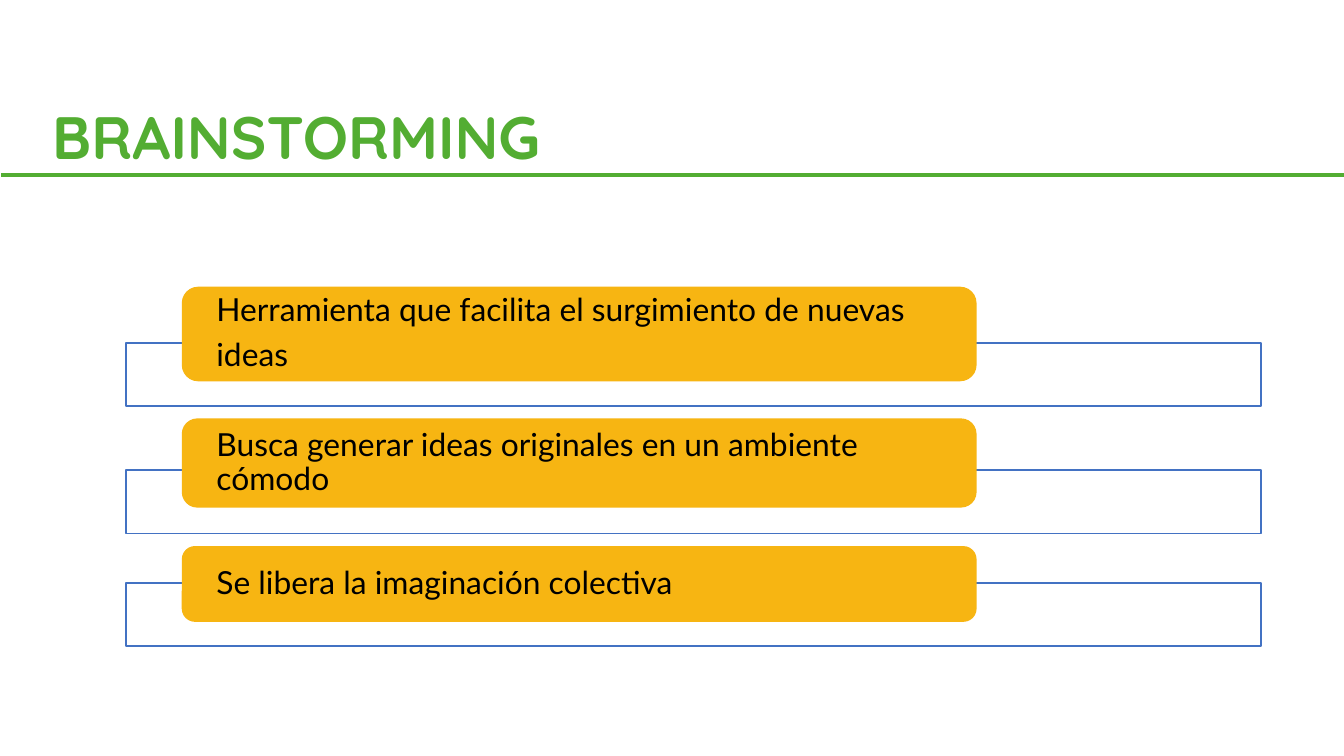
from dataclasses import dataclass

from lxml.etree import SubElement
from pptx import Presentation
from pptx.dml.color import RGBColor
from pptx.enum.shapes import MSO_CONNECTOR, MSO_SHAPE
from pptx.enum.text import MSO_ANCHOR
from pptx.oxml.ns import qn
from pptx.util import Inches, Pt

GREEN, GOLD, BLUE = "53AD32", "F7B512", "4372C3"
WHITE, BLACK = "FFFFFF", "000000"
PAD = 0.03  # gap between a label's edge and its text box


@dataclass
class Idea:
    lines: list[str]
    bar_top: float
    top: float
    high: float


IDEAS = [
    Idea(["Herramienta que facilita el surgimiento de nuevas", "ideas"],
         2.55, 2.14, 0.69),
    Idea(["Busca generar ideas originales en un ambiente cómodo"],
         3.5, 3.12, 0.65),
    Idea(["Se libera la imaginación colectiva"], 4.34, 4.07, 0.55),
]


def tint(color, code: str) -> None:
    color.rgb = RGBColor.from_string(code)


def add_box(slide, kind, left: float, top: float, wide: float, high: float,
            fill: str, edge: str):
    box = slide.shapes.add_shape(kind, Inches(left), Inches(top),
                                 Inches(wide), Inches(high))
    box.shadow.inherit = False
    box.fill.solid()
    tint(box.fill.fore_color, fill)
    tint(box.line.color, edge)
    box.line.width = Pt(1)
    return box


def add_text(slide, lines: list[str], left: float, top: float, wide: float,
             high: float, side: float, edge: float, font: str, size: int,
             color: str, bold: bool = False) -> None:
    box = slide.shapes.add_textbox(Inches(left), Inches(top),
                                   Inches(wide), Inches(high))
    frame = box.text_frame
    frame.word_wrap = True
    frame.vertical_anchor = MSO_ANCHOR.MIDDLE
    frame.margin_left = frame.margin_right = Inches(side)
    frame.margin_top = frame.margin_bottom = Inches(edge)
    frame.text = "\n".join(lines)
    for i, para in enumerate(frame.paragraphs):
        para.line_spacing = 0.9
        para.space_before = Pt(6 if i else 0)
        for run in para.runs:
            run.font.name = font
            run.font.size = Pt(size)
            run.font.bold = bold
            tint(run.font.color, color)


def add_idea(slide, idea: Idea) -> None:
    # Bar behind the label, slightly transparent
    bar = add_box(slide, MSO_SHAPE.RECTANGLE, 0.94, idea.bar_top, 8.44, 0.47,
                  WHITE, BLUE)
    tone = bar.fill._xPr.find(qn("a:solidFill"))[0]
    SubElement(tone, qn("a:alpha")).set("val", "90000")

    # Label and its text
    left, wide = 1.36, 5.9
    add_box(slide, MSO_SHAPE.ROUNDED_RECTANGLE, left, idea.top, wide,
            idea.high, GOLD, GOLD)
    add_text(slide, idea.lines, left + PAD, idea.top + PAD, wide - 2 * PAD,
             idea.high - 2 * PAD, 0.22, 0, "Lato", 17, BLACK)


def add_rule(slide, top: float) -> None:
    rule = slide.shapes.add_connector(MSO_CONNECTOR.STRAIGHT, Inches(0.01),
                                      Inches(top), Inches(10), Inches(top))
    tint(rule.line.color, GREEN)
    rule.line.width = Pt(2)
    SubElement(rule._element.spPr, qn("a:effectLst"))


def main() -> None:
    # Widescreen, 16 to 9
    deck = Presentation()
    deck.slide_width = Inches(10)
    deck.slide_height = Inches(10 * 9 / 16)
    slide = deck.slides.add_slide(deck.slide_layouts[6])

    # Ideas
    for idea in IDEAS:
        add_idea(slide, idea)

    # Title and rule
    add_text(slide, ["BRAINSTORMING"], 0.29, 0.5, 9.42, 1.08, 0.1, 0.05,
             "Quicksand", 32, GREEN, bold=True)
    add_rule(slide, 1.3)

    deck.save("out.pptx")


if __name__ == "__main__":
    main()
